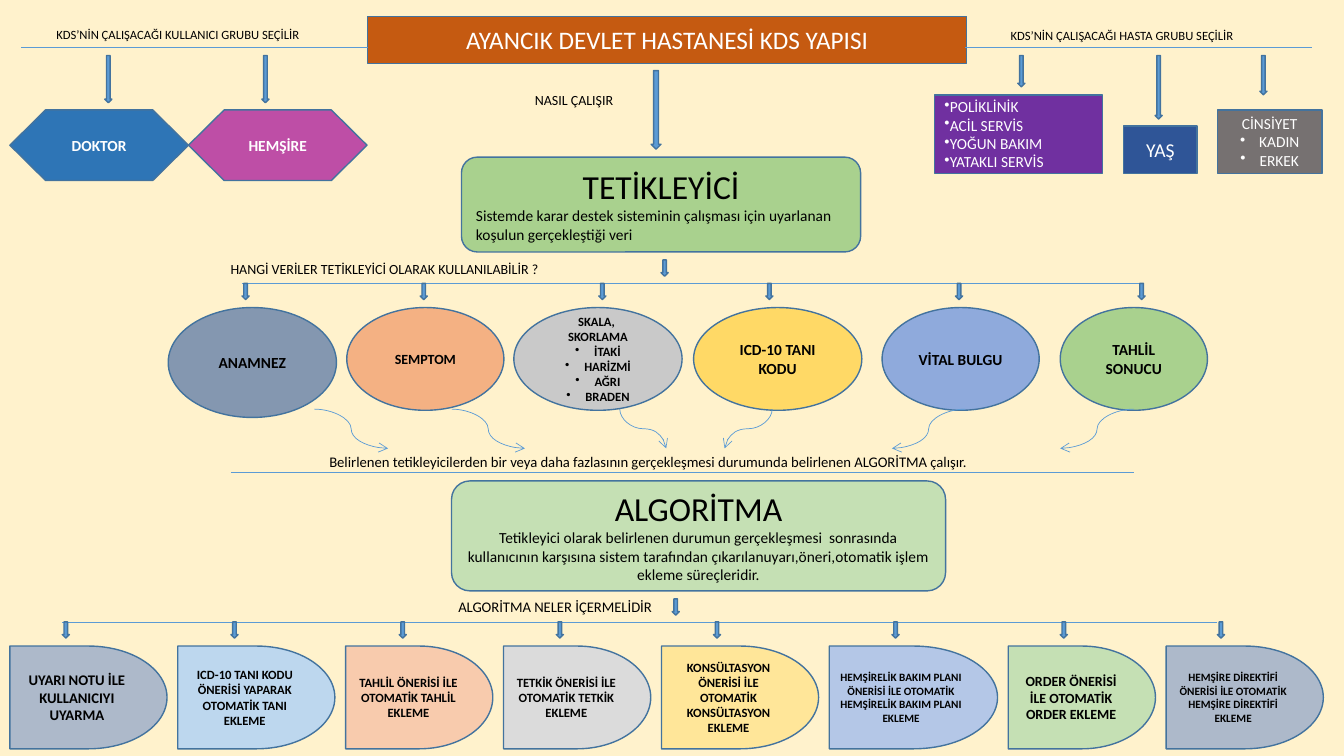
from dataclasses import dataclass

import lxml.etree
import pptx
import pptx.dml.color
import pptx.enum.shapes
import pptx.enum.text
import pptx.oxml.ns
import pptx.util

Cm = pptx.util.Cm
Pt = pptx.util.Pt
Preset = pptx.enum.shapes.MSO_SHAPE
Connector = pptx.enum.shapes.MSO_CONNECTOR
Align = pptx.enum.text.PP_ALIGN
qualified = pptx.oxml.ns.qn


@dataclass(frozen=True)
class Theme:
    font: str = "Calibri"
    background: str = "FFF2CC"
    outline: str = "43739E"
    accent: str = "5B9BD5"
    black: str = "000000"
    white: str = "FFFFFF"
    rust: str = "C55A11"
    blue: str = "2E75B6"
    pink: str = "BE4EA6"
    purple: str = "7030A0"
    navy: str = "2F5597"
    gray: str = "767171"
    green: str = "A9D18E"
    pale_green: str = "C5E0B4"
    slate: str = "8497B0"
    orange: str = "F4B183"
    silver: str = "C9C9C9"
    gold: str = "FFD966"
    periwinkle: str = "8FAADC"
    pale_slate: str = "ADB9CA"
    pale_blue: str = "BDD7EE"
    pale_orange: str = "F8CBAD"
    pale_silver: str = "DBDBDB"
    pale_gold: str = "FFE699"
    pale_periwinkle: str = "B4C7E7"
    heading: float = 24
    title: float = 18
    large: float = 14
    body: float = 11
    label: float = 10.5
    small: float = 10
    caption: float = 9
    tiny: float = 8


THEME = Theme()


@dataclass(frozen=True)
class Line:
    text: str
    size: float
    color: str = THEME.black
    bold: bool = False
    align: Align = Align.CENTER
    bullet_indent: float | None = None


@dataclass(frozen=True)
class Block:
    left: float
    top: float
    width: float
    height: float
    preset: Preset
    fill: str
    lines: tuple[Line, ...] = ()


@dataclass(frozen=True)
class Caption:
    left: float
    top: float
    width: float
    height: float
    text: str
    size: float


@dataclass(frozen=True)
class Curve:
    start: float
    end: float
    turned: bool = False


def rgb(value: str) -> pptx.dml.color.RGBColor:
    return pptx.dml.color.RGBColor.from_string(value)


def write_lines(frame, lines: tuple[Line, ...]) -> None:
    frame.word_wrap = True
    for index, line in enumerate(lines):
        paragraph = frame.add_paragraph() if index else frame.paragraphs[0]
        paragraph.alignment = line.align
        run = paragraph.add_run()
        run.text = line.text
        run.font.name = THEME.font
        run.font.size = Pt(line.size)
        run.font.bold = line.bold
        run.font.color.rgb = rgb(line.color)
        if line.bullet_indent is not None:
            properties = paragraph._p.get_or_add_pPr()
            properties.set("marL", str(Cm(line.bullet_indent)))
            properties.set("indent", str(-Cm(line.bullet_indent)))
            lxml.etree.SubElement(properties, qualified("a:buChar")).set("char", "•")


def draw_block(slide, block: Block) -> None:
    shape = slide.shapes.add_shape(
        block.preset, Cm(block.left), Cm(block.top), Cm(block.width), Cm(block.height))
    shape.shadow.inherit = False
    shape.fill.solid()
    shape.fill.fore_color.rgb = rgb(block.fill)
    shape.line.color.rgb = rgb(THEME.outline)
    shape.line.width = Pt(1)
    if block.lines:
        shape.text_frame.vertical_anchor = pptx.enum.text.MSO_ANCHOR.MIDDLE
        write_lines(shape.text_frame, block.lines)


def draw_arrow(slide, left: float, top: float, height: float = 0.41, width: float = 0.18) -> None:
    draw_block(slide, Block(left, top, width, height, Preset.DOWN_ARROW, THEME.accent))


def draw_caption(slide, caption: Caption) -> None:
    box = slide.shapes.add_textbox(
        Cm(caption.left), Cm(caption.top), Cm(caption.width), Cm(caption.height))
    write_lines(box.text_frame, (Line(caption.text, caption.size, align=Align.LEFT),))
    box.text_frame.auto_size = pptx.enum.text.MSO_AUTO_SIZE.SHAPE_TO_FIT_TEXT


def draw_connector(slide, kind: Connector, left: float, top: float, right: float, bottom: float):
    connector = slide.shapes.add_connector(kind, Cm(left), Cm(top), Cm(right), Cm(bottom))
    connector.line.color.rgb = rgb(THEME.accent)
    connector.line.width = Pt(0.5)
    lxml.etree.SubElement(connector.element.spPr, qualified("a:effectLst"))
    return connector


def draw_curve(slide, curve: Curve, top: float = 10.31, bottom: float = 11.3) -> None:
    across, down = curve.end - curve.start, bottom - top
    center_x, center_y = (curve.start + curve.end) / 2, (top + bottom) / 2
    if curve.turned:
        across, down = down, -across
    connector = draw_connector(
        slide, Connector.CURVE, center_x - across / 2, center_y - down / 2,
        center_x + across / 2, center_y + down / 2)
    properties = connector.element.spPr
    if curve.turned:
        properties.find(qualified("a:xfrm")).set("rot", str(90 * 60000))
    outline = properties.find(qualified("a:ln"))
    lxml.etree.SubElement(outline, qualified("a:tailEnd")).set("type", "arrow")


def white_bullets(words: tuple[str, ...], align: Align, indent: float) -> tuple[Line, ...]:
    return tuple(Line(word, THEME.body, THEME.white, False, align, indent) for word in words)


def bold(text: str, size: float = THEME.body) -> Line:
    return Line(text, size, bold=True)


BLOCKS = (
    Block(9.27, 0.41, 15.09, 1.19, Preset.RECTANGLE, THEME.rust,
          (Line("AYANCIK DEVLET HASTANESİ KDS YAPISI", THEME.title, THEME.white),)),
    Block(0.25, 2.77, 4.5, 1.78, Preset.FLOWCHART_PREPARATION, THEME.blue,
          (Line("DOKTOR", THEME.body, THEME.white, True),)),
    Block(4.75, 2.77, 4.5, 1.78, Preset.FLOWCHART_PREPARATION, THEME.pink,
          (Line("HEMŞİRE", THEME.body, THEME.white, True),)),
    Block(23.55, 2.39, 4.24, 1.98, Preset.FLOWCHART_PROCESS, THEME.purple,
          white_bullets(("POLİKLİNİK", "ACİL SERVİS", "YOĞUN BAKIM", "YATAKLI SERVİS"), Align.LEFT, 0)),
    Block(28.32, 3.18, 1.85, 1.19, Preset.FLOWCHART_PROCESS, THEME.navy,
          (Line("YAŞ", THEME.large, THEME.white),)),
    Block(30.68, 2.77, 2.64, 1.6, Preset.FLOWCHART_PROCESS, THEME.gray,
          (Line("CİNSİYET", THEME.body, THEME.white),)
          + white_bullets(("KADIN", "ERKEK"), Align.CENTER, 0.48)),
    Block(11.63, 3.96, 10.06, 2.39, Preset.FLOWCHART_ALTERNATE_PROCESS, THEME.green,
          (Line("TETİKLEYİCİ", THEME.heading),
           Line("Sistemde karar destek sisteminin çalışması için uyarlanan koşulun gerçekleştiği veri",
                THEME.body, align=Align.LEFT))),
    Block(11.38, 12.12, 12.45, 2.77, Preset.ROUNDED_RECTANGLE, THEME.pale_green,
          (Line("ALGORİTMA", THEME.heading),
           Line("Tetikleyici olarak belirlenen durumun gerçekleşmesi  sonrasında kullanıcının karşısına "
                "sistem tarafından çıkarılanuyarı,öneri,otomatik işlem ekleme süreçleridir.", THEME.body))),
)

SCALES = (bold("SKALA, ", THEME.caption), bold("SKORLAMA", THEME.caption)) + tuple(
    Line(scale, THEME.caption, bold=True, bullet_indent=0.48)
    for scale in ("İTAKİ", "HARİZMİ", "AĞRI", "BRADEN"))

TRIGGERS = (
    (4.24, 4.24, 2.77, THEME.slate, (bold("ANAMNEZ"),)),
    (8.74, 3.96, 2.59, THEME.orange, (bold("SEMPTOM", THEME.small),)),
    (12.95, 4.24, 2.59, THEME.silver, SCALES),
    (17.48, 4.24, 2.59, THEME.gold, (bold("ICD-10 TANI KODU"),)),
    (22.23, 3.96, 2.59, THEME.periwinkle, (bold("VİTAL BULGU"),)),
    (26.72, 3.71, 2.59, THEME.green, (bold("TAHLİL SONUCU"),)),
)

ACTIONS = (
    (3.96, THEME.pale_slate, bold("UYARI NOTU İLE KULLANICIYI UYARMA", THEME.label)),
    (3.96, THEME.pale_blue, bold("ICD-10 TANI KODU ÖNERİSİ YAPARAK OTOMATİK TANI EKLEME", THEME.caption)),
    (3.71, THEME.pale_orange, bold("TAHLİL ÖNERİSİ İLE OTOMATİK TAHLİL EKLEME", THEME.caption)),
    (3.71, THEME.pale_silver, bold("TETKİK ÖNERİSİ İLE OTOMATİK TETKİK EKLEME", THEME.caption)),
    (3.96, THEME.pale_gold, bold("KONSÜLTASYON ÖNERİSİ İLE OTOMATİK KONSÜLTASYON EKLEME", THEME.caption)),
    (4.24, THEME.pale_periwinkle,
     bold("HEMŞİRELİK BAKIM PLANI ÖNERİSİ İLE OTOMATİK HEMŞİRELİK BAKIM PLANI EKLEME", THEME.tiny)),
    (3.71, THEME.pale_green, bold("ORDER ÖNERİSİ İLE OTOMATİK ORDER EKLEME", THEME.small)),
    (3.96, THEME.pale_slate,
     bold("HEMŞİRE DİREKTİFİ ÖNERİSİ İLE OTOMATİK HEMŞİRE DİREKTİFİ EKLEME", THEME.tiny)),
)
ACTION_GAP = 0.27

CAPTIONS = (
    Caption(1.17, 0.56, 9.53, 0.64, "KDS’NİN ÇALIŞACAĞI KULLANICI GRUBU SEÇİLİR", THEME.caption),
    Caption(25.22, 0.58, 8.64, 0.64, "KDS’NİN ÇALIŞACAĞI HASTA GRUBU SEÇİLİR", THEME.caption),
    Caption(11.3, 14.94, 7.95, 0.71, "ALGORİTMA NELER İÇERMELİDİR", THEME.label),
    Caption(8.05, 11.28, 23.01, 0.71, "Belirlenen tetikleyicilerden bir veya daha fazlasının gerçekleşmesi "
            "durumunda belirlenen ALGORİTMA çalışır.", THEME.label),
    Caption(13.23, 2.18, 3.96, 0.69, "NASIL ÇALIŞIR", THEME.small),
    Caption(5.56, 6.45, 11.13, 0.69, "HANGİ VERİLER TETİKLEYİCİ OLARAK KULLANILABİLİR ?", THEME.small),
)

RULES = ((24.33, 33.07, 1.19), (0.53, 9.27, 1.19), (6.1, 28.83, 7.14),
         (5.82, 28.58, 11.91), (1.57, 30.68, 15.67))
GROUP_ARROWS = ((2.64, 1.19), (6.6, 1.19), (25.65, 0.79), (29.11, 1.6), (31.75, 0.99))
ARROW_ROWS = (
    (7.14, (6.1, 10.59, 15.09, 19.3, 24.08, 28.68)),
    (15.67, (1.57, 5.82, 10.06, 14.02, 17.98, 22.48, 26.72, 30.68)),
    (6.55, (16.66,)),
    (15.09, (16.94,)),
)
CURVES = (Curve(7.92, 9.78), Curve(11.38, 13.23), Curve(15.62, 16.79, True),
          Curve(19.46, 18.26, True), Curve(24.33, 22.48), Curve(28.58, 26.72))


def main() -> None:
    presentation = pptx.Presentation()
    presentation.slide_width, presentation.slide_height = Cm(33.87), Cm(19.05)
    slide = presentation.slides.add_slide(presentation.slide_layouts[6])
    slide.background.fill.solid()
    slide.background.fill.fore_color.rgb = rgb(THEME.background)

    for block in BLOCKS:
        draw_block(slide, block)
    for left, width, height, fill, lines in TRIGGERS:
        draw_block(slide, Block(left, 7.75, width, height, Preset.OVAL, fill, lines))
    left = 0.25
    for width, fill, line in ACTIONS:
        draw_block(slide, Block(left, 16.28, width, 2.59, Preset.FLOWCHART_DELAY, fill, (line,)))
        left += width + ACTION_GAP
    for caption in CAPTIONS:
        draw_caption(slide, caption)
    for start, end, top in RULES:
        draw_connector(slide, Connector.STRAIGHT, start, top, end, top)
    for left, height in GROUP_ARROWS:
        draw_arrow(slide, left, 1.4, height)
    draw_arrow(slide, 16.41, 1.78, 1.98, 0.25)
    for top, lefts in ARROW_ROWS:
        for left in lefts:
            draw_arrow(slide, left, top)
    for curve in CURVES:
        draw_curve(slide, curve)
    presentation.save("out.pptx")


if __name__ == "__main__":
    main()
